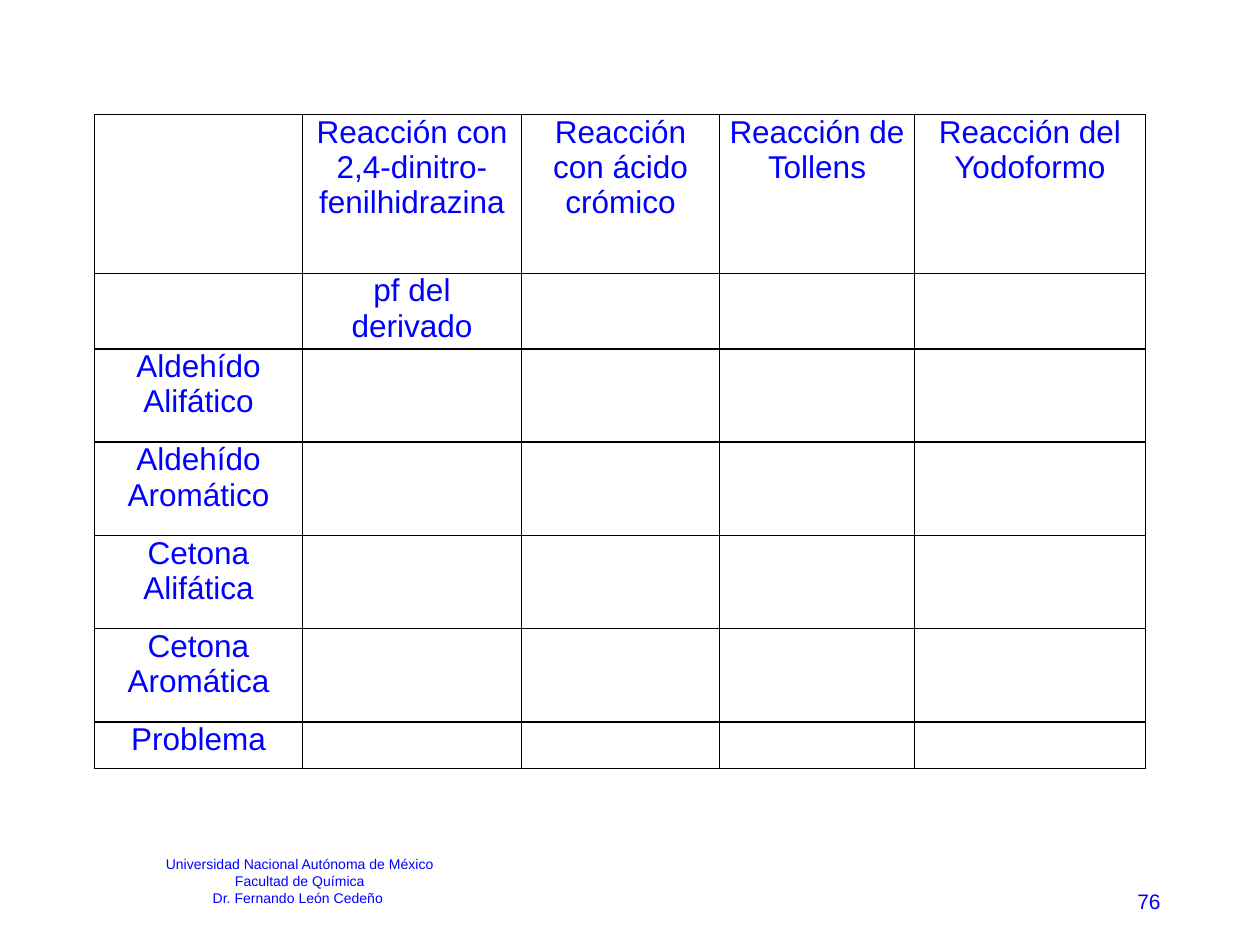
"""Build a slide with an empty results table for aldehyde and ketone tests."""
import pptx
import pptx.dml.color
import pptx.enum.text
import pptx.oxml
import pptx.oxml.ns
import pptx.util
from lxml import etree

Inches, Pt = pptx.util.Inches, pptx.util.Pt
ALIGN = pptx.enum.text.PP_ALIGN
MIDDLE = pptx.enum.text.MSO_ANCHOR.MIDDLE
BLUE = pptx.dml.color.RGBColor(0x00, 0x00, 0xFF)
WHITE = pptx.dml.color.RGBColor(0xFF, 0xFF, 0xFF)
BLACK = pptx.dml.color.RGBColor(0x00, 0x00, 0x00)

TESTS = [
    "",
    "Reacción con 2,4-dinitro-fenilhidrazina",
    "Reacción con ácido crómico",
    "Reacción de Tollens",
    "Reacción del Yodoformo",
]
MEASURES = ["", "pf del derivado", "", "", ""]
SAMPLES = [
    "Aldehído Alifático",
    "Aldehído Aromático",
    "Cetona Alifática",
    "Cetona Aromática",
    "Problema",
]
RESULTS = [TESTS, MEASURES] + [[sample, "", "", "", ""] for sample in SAMPLES]
COLUMN_WIDTHS = [1.65, 1.74, 1.57, 1.55, 1.83]
ROW_HEIGHTS = [1.26, 0.6] + [0.74] * 4 + [0.37]
CREDITS = [
    "Universidad Nacional Autónoma de México",
    "Facultad de Química",
    "Dr. Fernando León Cedeño ",
]
PAGE_NUMBER = ["76"]


def style(paragraph, size, alignment):
    paragraph.alignment = alignment
    paragraph.font.size = Pt(size)
    paragraph.font.name = "Arial"
    paragraph.font.color.rgb = BLUE


def add_borders(cell):
    properties = cell._tc.get_or_add_tcPr()
    qn = pptx.oxml.ns.qn
    for position, side in enumerate(("a:lnL", "a:lnR", "a:lnT", "a:lnB")):
        line = etree.Element(qn(side), w=str(Pt(1)))
        fill = etree.SubElement(line, qn("a:solidFill"))
        etree.SubElement(fill, qn("a:srgbClr"), val=str(BLACK))
        properties.insert(position, line)


def add_results(slide):
    table = slide.shapes.add_table(
        len(RESULTS), len(TESTS), Inches(0.75), Inches(0.91),
        Inches(sum(COLUMN_WIDTHS)), Inches(sum(ROW_HEIGHTS)),
    ).table
    table.first_row = table.horz_banding = False
    for column, width in zip(table.columns, COLUMN_WIDTHS):
        column.width = Inches(width)
    for row, height, labels in zip(table.rows, ROW_HEIGHTS, RESULTS):
        row.height = Inches(height)
        for cell, label in zip(row.cells, labels):
            cell.text = label
            cell.margin_left = cell.margin_right = Inches(0.07)
            cell.margin_top = cell.margin_bottom = 0
            cell.fill.background()
            style(cell.text_frame.paragraphs[0], 18, ALIGN.CENTER)
            add_borders(cell)


def add_footer(slide, lines, bounds, size, alignment):
    footer = slide.shapes.add_textbox(*map(Inches, bounds))
    frame = footer.text_frame
    frame.word_wrap = True
    frame.vertical_anchor = MIDDLE
    frame.text = "\n".join(lines)
    for paragraph in frame.paragraphs:
        style(paragraph, size, alignment)
    return footer


def main():
    presentation = pptx.Presentation()
    presentation.slide_width, presentation.slide_height = Inches(10), Inches(7.5)
    slide = presentation.slides.add_slide(presentation.slide_layouts[6])
    credits = add_footer(slide, CREDITS, (1.17, 6.65, 2.42, 0.68), 8, ALIGN.CENTER)
    credits.fill.solid()
    credits.fill.fore_color.rgb = WHITE
    add_results(slide)
    add_footer(slide, PAGE_NUMBER, (7.06, 6.95, 2.25, 0.4), 12, ALIGN.RIGHT)
    presentation.save("out.pptx")


if __name__ == "__main__":
    main()
